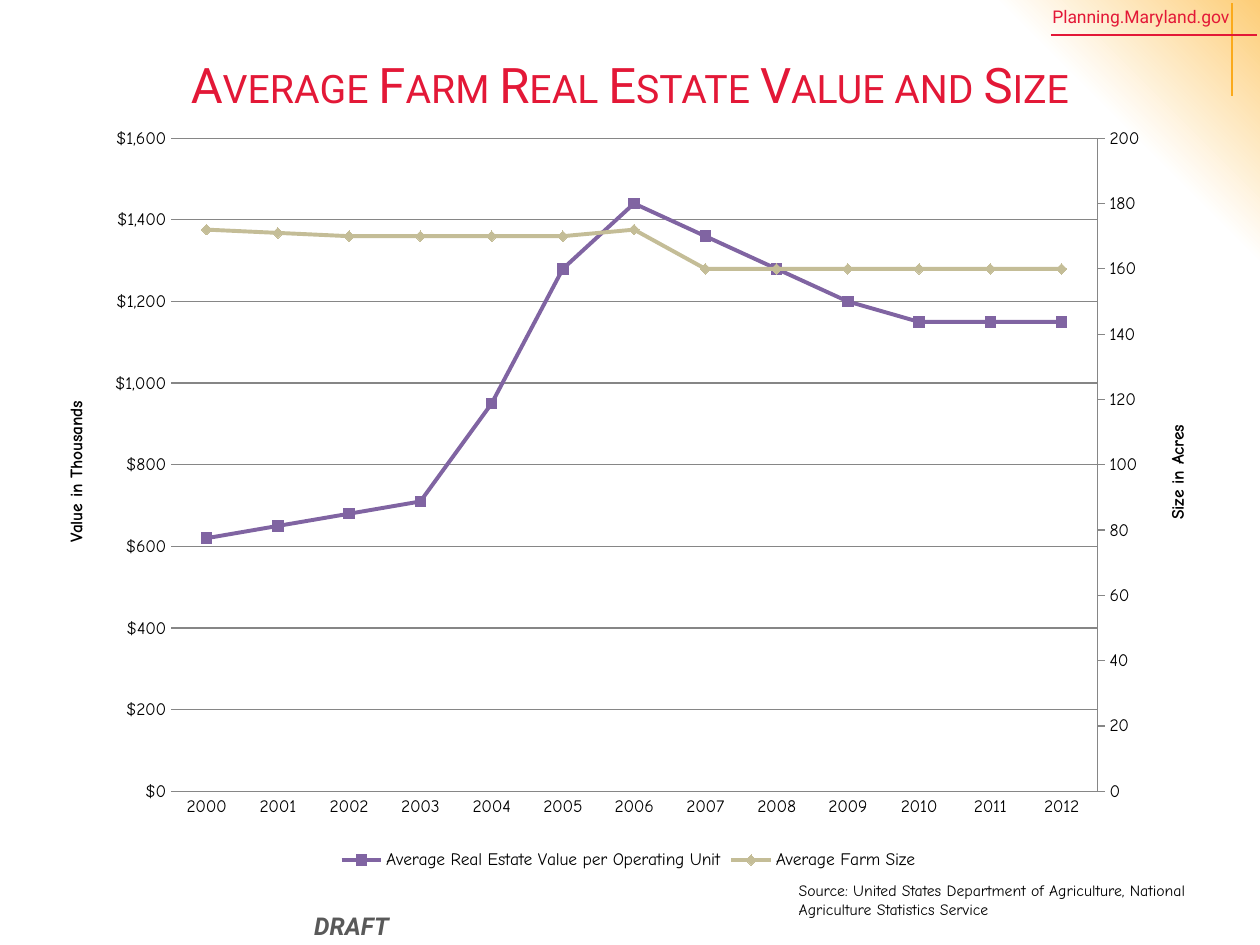
from copy import deepcopy
from dataclasses import dataclass

from lxml import etree
from pptx import Presentation
from pptx.chart.axis import CategoryAxis, ValueAxis
from pptx.chart.data import CategoryChartData
from pptx.dml.color import RGBColor
from pptx.enum.chart import (
    XL_CHART_TYPE, XL_LEGEND_POSITION, XL_MARKER_STYLE, XL_TICK_MARK)
from pptx.enum.shapes import MSO_CONNECTOR
from pptx.enum.text import MSO_ANCHOR, PP_ALIGN
from pptx.oxml.ns import qn
from pptx.util import Pt

LINE = XL_CHART_TYPE.LINE_MARKERS
BOTTOM = XL_LEGEND_POSITION.BOTTOM
SQUARE, DIAMOND = XL_MARKER_STYLE.SQUARE, XL_MARKER_STYLE.DIAMOND
NONE, OUT = XL_TICK_MARK.NONE, XL_TICK_MARK.OUTSIDE
STRAIGHT = MSO_CONNECTOR.STRAIGHT
MIDDLE = MSO_ANCHOR.MIDDLE
LEFT, CENTER, RIGHT = PP_ALIGN.LEFT, PP_ALIGN.CENTER, PP_ALIGN.RIGHT


@dataclass(frozen=True)
class Theme:
    red: str = "E31837"
    gold: str = "FBAA1B"
    glow: str = "FDCD77"
    white: str = "FFFFFF"
    black: str = "000000"
    dark: str = "595959"
    grid: str = "868686"
    plum: str = "8064A2"
    sand: str = "C4BD97"
    head: str = "Roboto"
    body: str = "Comic Neue"
    title: float = 28
    draft: float = 14
    chart: float = 10
    note: float = 9


THEME = Theme()


@dataclass(frozen=True)
class Label:
    text: str
    box: tuple
    size: float
    face: str
    color: str
    align: PP_ALIGN = LEFT
    inset: tuple = (7.2, 3.6, 7.2, 3.6)
    strong: bool = False


@dataclass(frozen=True)
class Rule:
    start: tuple
    end: tuple
    color: str


@dataclass(frozen=True)
class Trend:
    name: str
    values: tuple
    color: str
    mark: XL_MARKER_STYLE


LABELS = (
    Label("Planning.Maryland.gov", (528.5, 3.6, 174, 12.2), THEME.chart,
          THEME.head, THEME.red, RIGHT, (7.2, 0, 0, 0)),
    Label("DRAFT", (113.8, 517, 174.2, 24.5), THEME.draft, THEME.head,
          THEME.dark, CENTER, strong=True),
    Label("Source: United States Department of Agriculture, "
          "National Agriculture Statistics Service",
          (449.3, 499.7, 260.6, 28.8), THEME.note, THEME.body, THEME.black),
)
RULES = (
    Rule((704, 2), (704, 55), THEME.gold),
    Rule((600.5, 20), (718.5, 20), THEME.red),
)
TRENDS = (
    Trend("Average Real Estate Value per Operating Unit",
          (620, 650, 680, 710, 950, 1280, 1440, 1360, 1280, 1200)
          + (1150,) * 3, THEME.plum, SQUARE),
    Trend("Average Farm Size",
          (172, 171) + (170,) * 4 + (172,) + (160,) * 6,
          THEME.sand, DIAMOND),
)
PLOT = {"x": 0.11, "y": 0.03, "w": 0.79, "h": 0.86}


def style(font, face: str, size: float, color: str) -> None:
    font.name = face
    font.size = Pt(size)
    font.color.rgb = RGBColor.from_string(color)


def stroke(line, color: str, width: float) -> None:
    line.color.rgb = RGBColor.from_string(color)
    line.width = Pt(width)


def add_label(slide, label: Label) -> None:
    frame = slide.shapes.add_textbox(*map(Pt, label.box)).text_frame
    frame.word_wrap = True
    (frame.margin_left, frame.margin_top,
     frame.margin_right, frame.margin_bottom) = map(Pt, label.inset)
    para = frame.paragraphs[0]
    para.alignment = label.align
    run = para.add_run()
    run.text = label.text
    style(run.font, label.face, label.size, label.color)
    if label.strong:
        run.font.bold = run.font.italic = True


def add_rule(slide, rule: Rule) -> None:
    line = slide.shapes.add_connector(
        STRAIGHT, *map(Pt, rule.start + rule.end))
    stroke(line.line, rule.color, 1)
    etree.SubElement(line._element.spPr, qn("a:effectLst"))


def set_title(slide, text: str) -> None:
    title = slide.shapes.title
    title.left, title.top, title.width, title.height = map(
        Pt, (36, 18, 648, 60))
    frame = title.text_frame
    frame.vertical_anchor = MIDDLE
    para = frame.paragraphs[0]
    para.alignment = CENTER
    run = para.add_run()
    run.text = text
    style(run.font, THEME.head, THEME.title, THEME.red)
    run._r.get_or_add_rPr().set("cap", "small")


def set_ground(slide) -> None:
    fill = slide.background.fill
    fill.gradient()
    fill.gradient_angle = 225
    stops = zip(fill.gradient_stops, (0, 0.12), (THEME.glow, THEME.white))
    for stop, place, color in stops:
        stop.position = place
        stop.color.rgb = RGBColor.from_string(color)
    tint = next(slide._element.iter(qn("a:srgbClr")))
    etree.SubElement(tint, qn("a:alpha"), val="50000")


def set_scale(axis: ValueAxis, name: str, top: float, step: float,
              form: str, tick: XL_TICK_MARK) -> None:
    axis.minimum_scale, axis.maximum_scale = 0, top
    axis.major_unit = step
    axis.major_tick_mark, axis.minor_tick_mark = tick, NONE
    axis.tick_labels.number_format = form
    axis.tick_labels.number_format_is_linked = False
    frame = axis.axis_title.text_frame
    frame.clear()
    frame._txBody.bodyPr.set("rot", "-5400000")
    run = frame.paragraphs[0].add_run()
    run.text = name
    style(run.font, THEME.body, THEME.chart, THEME.black)
    run.font.bold = True


def add_right(chart) -> ValueAxis:
    area = chart._chartSpace.chart.plotArea
    left = area.find(qn("c:lineChart"))
    right = deepcopy(left)
    left.remove(left.findall(qn("c:ser"))[1])
    right.remove(right.find(qn("c:ser")))
    left.addnext(right)
    cats = deepcopy(area.find(qn("c:catAx")))
    vals = deepcopy(area.find(qn("c:valAx")))
    area.find(qn("c:valAx")).addnext(vals)
    vals.addnext(cats)
    keys = {node.get("val"): str(50 + place)
            for place, node in enumerate(right.findall(qn("c:axId")))}
    for part in (right, cats, vals):
        for node in part.iter(qn("c:axId"), qn("c:crossAx")):
            node.set("val", keys[node.get("val")])
    vals.find(qn("c:axPos")).set("val", "r")
    vals.find(qn("c:crosses")).set("val", "max")
    CategoryAxis(cats).visible = False
    axis = ValueAxis(vals)
    axis.has_major_gridlines = False
    return axis


def set_plot(chart) -> None:
    area = chart._chartSpace.chart.plotArea
    for old in area.findall(qn("c:layout")):
        area.remove(old)
    layout = etree.Element(qn("c:layout"))
    area.insert(0, layout)
    manual = etree.SubElement(layout, qn("c:manualLayout"))
    etree.SubElement(manual, qn("c:layoutTarget"), val="inner")
    for side in "xy":
        etree.SubElement(manual, qn(f"c:{side}Mode"), val="edge")
    for side, share in PLOT.items():
        etree.SubElement(manual, qn(f"c:{side}"), val=str(share))


def add_chart(slide) -> None:
    data = CategoryChartData()
    data.categories = [str(year) for year in range(2000, 2013)]
    for trend in TRENDS:
        data.add_series(trend.name, trend.values)
    chart = slide.shapes.add_chart(
        LINE, *map(Pt, (24, 66, 670, 434)), data).chart
    style(chart.font, THEME.body, THEME.chart, THEME.black)
    chart.has_title = False
    chart.has_legend = True
    chart.legend.position = BOTTOM
    chart.legend.include_in_layout = False
    chart.plots[0].vary_by_categories = False
    for series, trend in zip(chart.series, TRENDS):
        series.smooth = False
        stroke(series.format.line, trend.color, 2.25)
        mark = series.marker
        mark.style, mark.size = trend.mark, 6
        mark.format.fill.solid()
        mark.format.fill.fore_color.rgb = RGBColor.from_string(trend.color)
        stroke(mark.format.line, trend.color, 0.75)
    years, left = chart.category_axis, chart.value_axis
    years.major_tick_mark = years.minor_tick_mark = NONE
    right = add_right(chart)
    left.has_major_gridlines = True
    for item in (years, right, left.major_gridlines):
        stroke(item.format.line, THEME.grid, 0.75)
    left.format.line.fill.background()
    set_scale(left, "Value in Thousands", 1600, 200, '"$"#,##0', NONE)
    set_scale(right, "Size in Acres", 200, 20, "General", OUT)
    set_plot(chart)


def main() -> None:
    deck = Presentation()
    deck.slide_width, deck.slide_height = Pt(720), Pt(540)
    slide = deck.slides.add_slide(deck.slide_layouts[5])
    set_ground(slide)
    for rule in RULES:
        add_rule(slide, rule)
    for label in LABELS:
        add_label(slide, label)
    set_title(slide, "Average Farm Real Estate Value and Size")
    add_chart(slide)
    deck.save("out.pptx")


if __name__ == "__main__":
    main()
